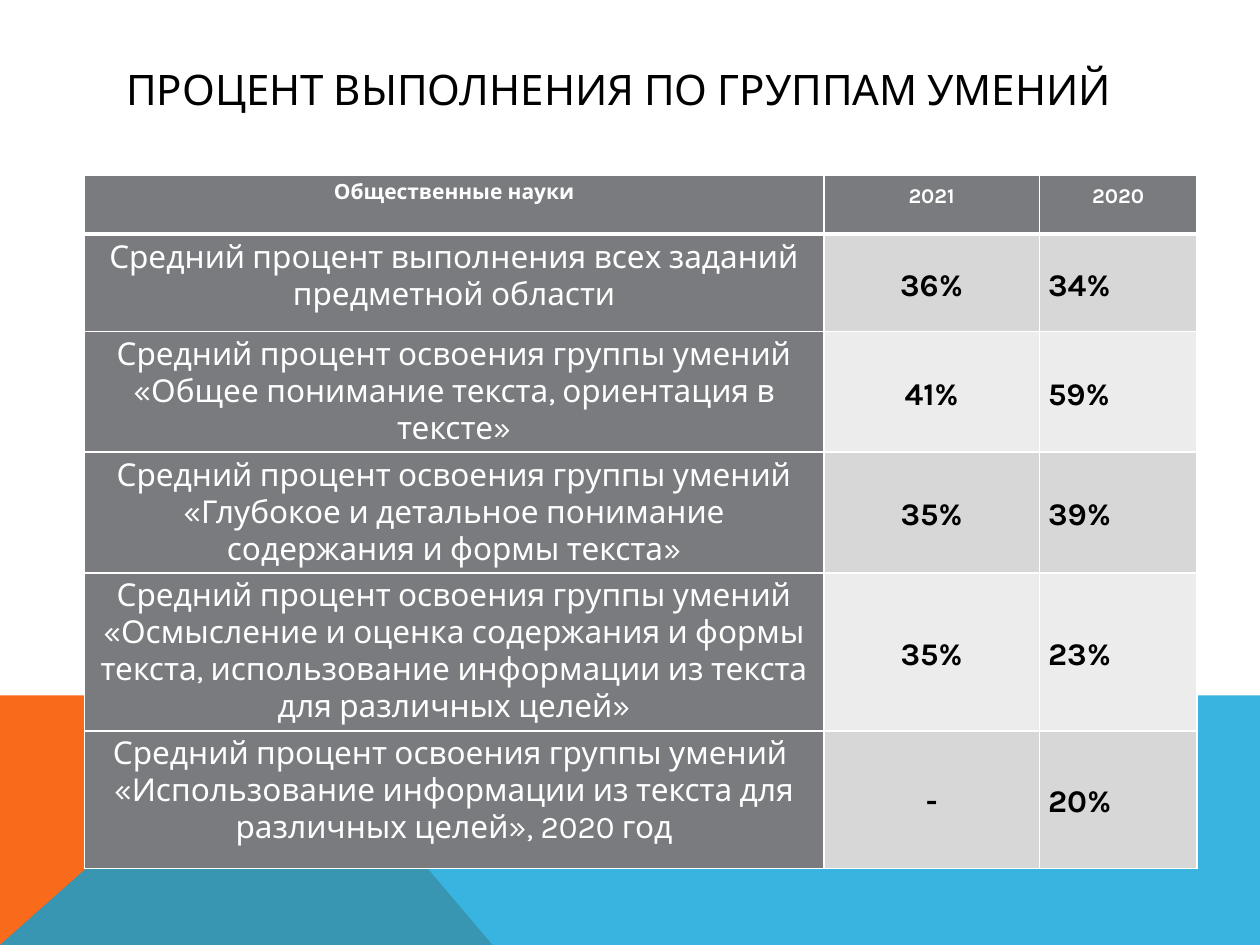
from lxml import etree
from pptx import Presentation
from pptx.dml.color import RGBColor as RGB
from pptx.enum.text import MSO_ANCHOR as Anchor, PP_ALIGN as Align
from pptx.oxml.ns import qn
from pptx.util import Cm, Pt

FONT = "Karla"
BLACK = RGB(0x00, 0x00, 0x00)
WHITE = RGB(0xFF, 0xFF, 0xFF)
ORANGE = RGB(0xF9, 0x6A, 0x1B)
BLUE = RGB(0x08, 0xA1, 0xD9)
GRAY = RGB(0x79, 0x7B, 0x7E)
BAND_DARK = RGB(0xD7, 0xD7, 0xD8)
BAND_LIGHT = RGB(0xEC, 0xEC, 0xEC)

SLIDE_WIDTH, SLIDE_HEIGHT = 25.4, 19.05
COLUMN_WIDTHS = (14.91, 4.34, 3.18)
ROW_HEIGHTS = (1.19, 1.96, 1.96, 1.96, 2.77, 2.77)
HEADINGS = ("Общественные науки", "2021", "2020")
GROUP = "Средний процент освоения группы умений "
RESULTS = (
    ("Средний процент выполнения всех заданий предметной области", "36%", "34%"),
    (GROUP + "«Общее понимание текста, ориентация в тексте»", "41%", "59%"),
    (GROUP + "«Глубокое и детальное понимание содержания и формы текста»", "35%", "39%"),
    (GROUP + "«Осмысление и оценка содержания и формы текста, "
     "использование информации из текста для различных целей»", "35%", "23%"),
    (GROUP + "\n«Использование информации из текста для различных целей», 2020 год",
     "-", "20%"),
)


def write(frame, text, size=18, color=WHITE, bold=False, align=Align.CENTER,
          spacing=None, after=None):
    frame.text = text
    for paragraph in frame.paragraphs:
        paragraph.alignment = align
        paragraph.line_spacing = spacing
        paragraph.space_after = after
        for run in paragraph.runs:
            font = run.font
            font.name, font.size, font.bold = FONT, Pt(size), bold
            font.color.rgb = color


def draw_polygon(slide, points, color, opacity=None):
    corners = [(Cm(x), Cm(y)) for x, y in points]
    builder = slide.shapes.build_freeform(*corners[0])
    builder.add_line_segments(corners[1:], close=True)
    polygon = builder.convert_to_shape()
    polygon.shadow.inherit = False
    polygon.line.fill.background()
    polygon.fill.solid()
    polygon.fill.fore_color.rgb = color
    if opacity is not None:
        fill_color = polygon.fill._xPr.find(".//" + qn("a:srgbClr"))
        etree.SubElement(fill_color, qn("a:alpha"), val=str(opacity * 1000))


def add_footer_band(slide, left, top, width, height):
    fold, orange_end = left + 5.66, left + 9.93
    right, bottom = left + width, top + height
    draw_polygon(slide, [(left, bottom), (left, top), (fold, top),
                         (orange_end, bottom)], ORANGE)
    draw_polygon(slide, [(left, bottom), (fold, top), (right, top),
                         (right, bottom)], BLUE, opacity=80)


def add_title(slide, left, top, width, height):
    title = slide.shapes.title
    title.left, title.top, title.width, title.height = map(
        Cm, (left, top, width, height))
    title.text_frame.vertical_anchor = Anchor.MIDDLE
    write(title.text_frame, "ПРОЦЕНТ ВЫПОЛНЕНИЯ ПО ГРУППАМ УМЕНИЙ",
          size=24, color=BLACK, align=Align.LEFT)


def style_cell(cell, color, bottom_border=1, top_border=1):
    cell.margin_left = cell.margin_right = Cm(0.18)
    cell.margin_top = cell.margin_bottom = Cm(0.1)
    cell.fill.solid()
    cell.fill.fore_color.rgb = color
    properties = cell._tc.get_or_add_tcPr()
    borders = (("lnL", 1), ("lnR", 1), ("lnT", top_border), ("lnB", bottom_border))
    for position, (side, points) in enumerate(borders):
        border = etree.Element(qn("a:" + side), w=str(Pt(points)))
        paint = etree.SubElement(border, qn("a:solidFill"))
        etree.SubElement(paint, qn("a:srgbClr"), val=str(WHITE))
        properties.insert(position, border)


def add_results_table(slide, left, top, width, height):
    table = slide.shapes.add_table(len(ROW_HEIGHTS), len(COLUMN_WIDTHS),
                                   *map(Cm, (left, top, width, height))).table
    for column, column_width in zip(table.columns, COLUMN_WIDTHS):
        column.width = Cm(column_width)
    for row, row_height in zip(table.rows, ROW_HEIGHTS):
        row.height = Cm(row_height)

    loose = dict(spacing=1.15, after=Pt(10))
    for index, heading in enumerate(HEADINGS):
        cell = table.cell(0, index)
        style_cell(cell, GRAY, bottom_border=3)
        write(cell.text_frame, heading, size=12, bold=True,
              **(loose if index else {}))

    for number, (skill, *percents) in enumerate(RESULTS, start=1):
        top_border = 3 if number == 1 else 1
        skill_cell = table.cell(number, 0)
        style_cell(skill_cell, GRAY, top_border=top_border)
        write(skill_cell.text_frame, skill)
        band = BAND_DARK if number % 2 else BAND_LIGHT
        aligns = (Align.CENTER, Align.LEFT)
        for index, (percent, align) in enumerate(zip(percents, aligns), start=1):
            cell = table.cell(number, index)
            style_cell(cell, band, top_border=top_border)
            cell.vertical_anchor = Anchor.MIDDLE
            write(cell.text_frame, percent, color=BLACK, bold=True,
                  align=align, **loose)


def main():
    deck = Presentation()
    deck.slide_width, deck.slide_height = Cm(SLIDE_WIDTH), Cm(SLIDE_HEIGHT)
    slide = deck.slides.add_slide(deck.slide_layouts[5])
    add_footer_band(slide, 0, 14.02, SLIDE_WIDTH, SLIDE_HEIGHT - 14.02)
    add_title(slide, 2.29, 1.02, 20.88, 1.52)
    add_results_table(slide, 1.7, 3.53, sum(COLUMN_WIDTHS), sum(ROW_HEIGHTS))
    deck.save("out.pptx")


if __name__ == "__main__":
    main()
